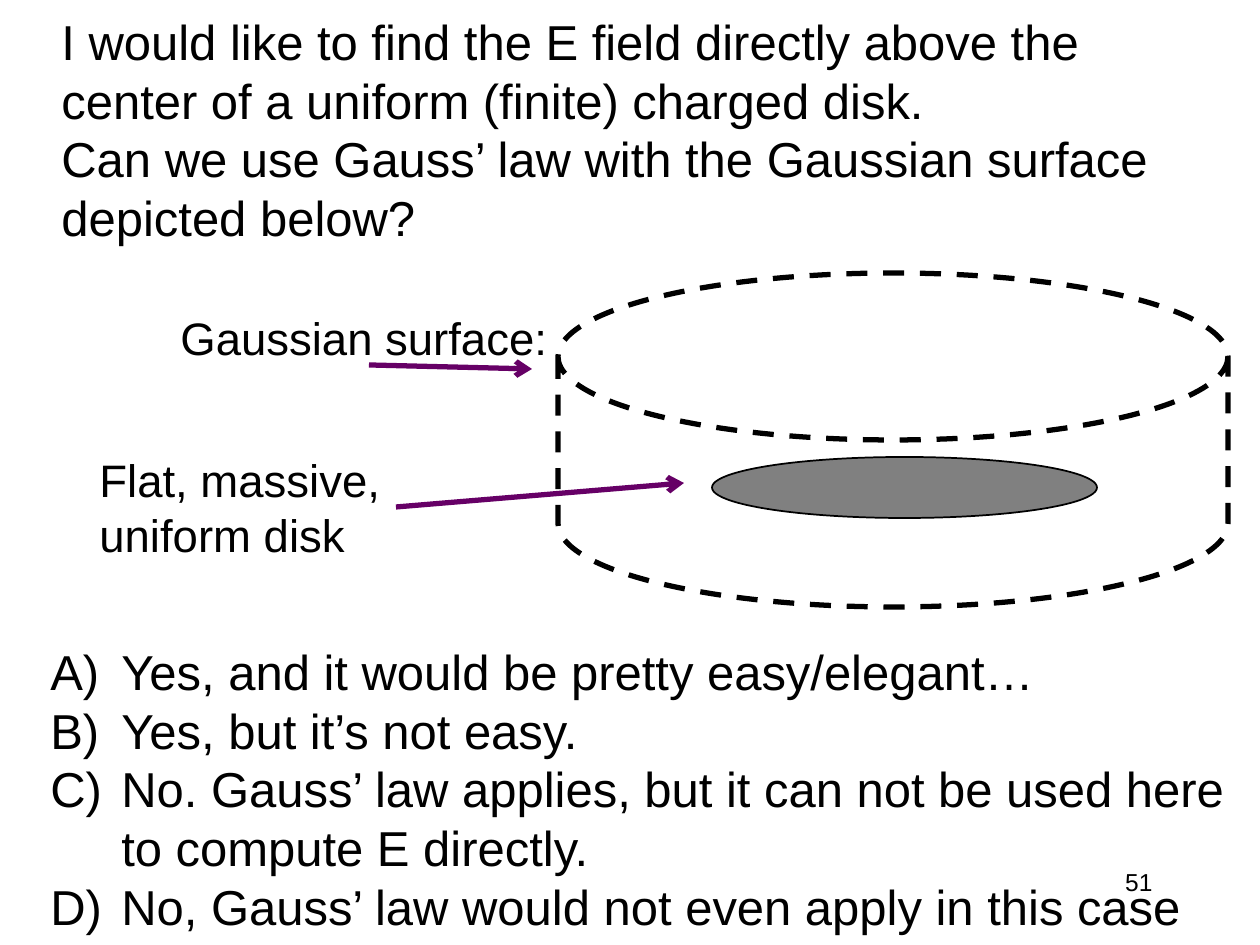
from pptx import Presentation
from pptx.dml.color import RGBColor
from pptx.enum.dml import MSO_LINE
from pptx.enum.shapes import MSO_CONNECTOR, MSO_SHAPE
from pptx.enum.text import MSO_AUTO_SIZE, PP_ALIGN
from pptx.oxml.ns import qn
from pptx.util import Pt
from lxml import etree

DASH = MSO_LINE.DASH
STRAIGHT = MSO_CONNECTOR.STRAIGHT
ELLIPSE, CAN = MSO_SHAPE.OVAL, MSO_SHAPE.CAN
LEFT, RIGHT = PP_ALIGN.LEFT, PP_ALIGN.RIGHT
FIT_SHAPE = MSO_AUTO_SIZE.SHAPE_TO_FIT_TEXT

BLACK = RGBColor(0x00, 0x00, 0x00)
GRAY = RGBColor(0x80, 0x80, 0x80)
PURPLE = RGBColor(0x66, 0x00, 0x66)
FONT = "Arial"
EMU_PER_PX = 914400 / 126

PAGE_SIZE = (1260, 945)
PAGE_NUMBER = ("51", (903, 861, 262, 63))
QUESTION = (
    "I would like to find the E field directly above the center of a uniform "
    "(finite) charged disk. \vCan we use Gauss’ law with the Gaussian surface "
    "depicted below?",
    (49, 5, 1125, 251),
)
ANSWERS = (
    "Yes, and it would be pretty easy/elegant…\n"
    "Yes, but it’s not easy.\n"
    "No. Gauss’ law applies, but it can not be used here to compute E directly.\n"
    "No, Gauss’ law would not even apply in this case",
    (38, 635, 1222, 310),
)
ANSWER_INDENT = 71
LABELS = [
    ("Gaussian surface:", (168, 304, 396, 68)),
    ("Flat, massive,\nuniform disk", (87, 446, 309, 123)),
]
DISK = (712, 457, 385, 61)
GAUSSIAN_SURFACE = (558, 273, 670, 334)
ARROWS = [(396, 507, 684, 483), (369, 365, 532, 369)]


def px(length):
    return round(length * EMU_PER_PX)


def add_text(page, text, place, size, align=LEFT, wrap=True, auto_size=FIT_SHAPE):
    box = page.shapes.add_textbox(*map(px, place))
    frame = box.text_frame
    frame.word_wrap = wrap
    frame.auto_size = auto_size
    frame.text = text
    for para in frame.paragraphs:
        para.alignment = align
        para.font.name = FONT
        para.font.size = Pt(size)
        para.font.color.rgb = BLACK
    return box


def letter_paragraphs(box, indent):
    """Number the paragraphs A), B), C)... with a hanging indent."""
    for para in box.text_frame.paragraphs:
        properties = para._p.get_or_add_pPr()
        properties.set("marL", str(px(indent)))
        properties.set("indent", str(-px(indent)))
        bullet = etree.SubElement(properties, qn("a:buAutoNum"))
        bullet.set("type", "alphaUcParenR")


def add_outline(page, kind, place, width):
    shape = page.shapes.add_shape(kind, *map(px, place))
    shape.shadow.inherit = False
    shape.fill.background()
    shape.line.color.rgb = BLACK
    shape.line.width = Pt(width)
    return shape


def add_arrow(page, ends):
    arrow = page.shapes.add_connector(STRAIGHT, *map(px, ends))
    arrow.line.color.rgb = PURPLE
    arrow.line.width = Pt(3)
    etree.SubElement(arrow.line._get_or_add_ln(), qn("a:tailEnd")).set("type", "arrow")
    etree.SubElement(arrow._element.spPr, qn("a:effectLst"))


def main():
    deck = Presentation()
    deck.slide_width, deck.slide_height = map(px, PAGE_SIZE)
    page = deck.slides.add_slide(deck.slide_layouts[6])

    add_text(page, *PAGE_NUMBER, 14, align=RIGHT, auto_size=MSO_AUTO_SIZE.NONE)
    add_text(page, *QUESTION, 28)
    letter_paragraphs(add_text(page, *ANSWERS, 28), ANSWER_INDENT)

    disk = add_outline(page, ELLIPSE, DISK, 1)
    disk.fill.solid()
    disk.fill.fore_color.rgb = GRAY
    surface = add_outline(page, CAN, GAUSSIAN_SURFACE, 3)
    surface.adjustments[0] = 0.5
    surface.line.dash_style = DASH

    for text, place in LABELS:
        add_text(page, text, place, 26, wrap=False)
    for ends in ARROWS:
        add_arrow(page, ends)

    deck.save("out.pptx")


if __name__ == "__main__":
    main()
